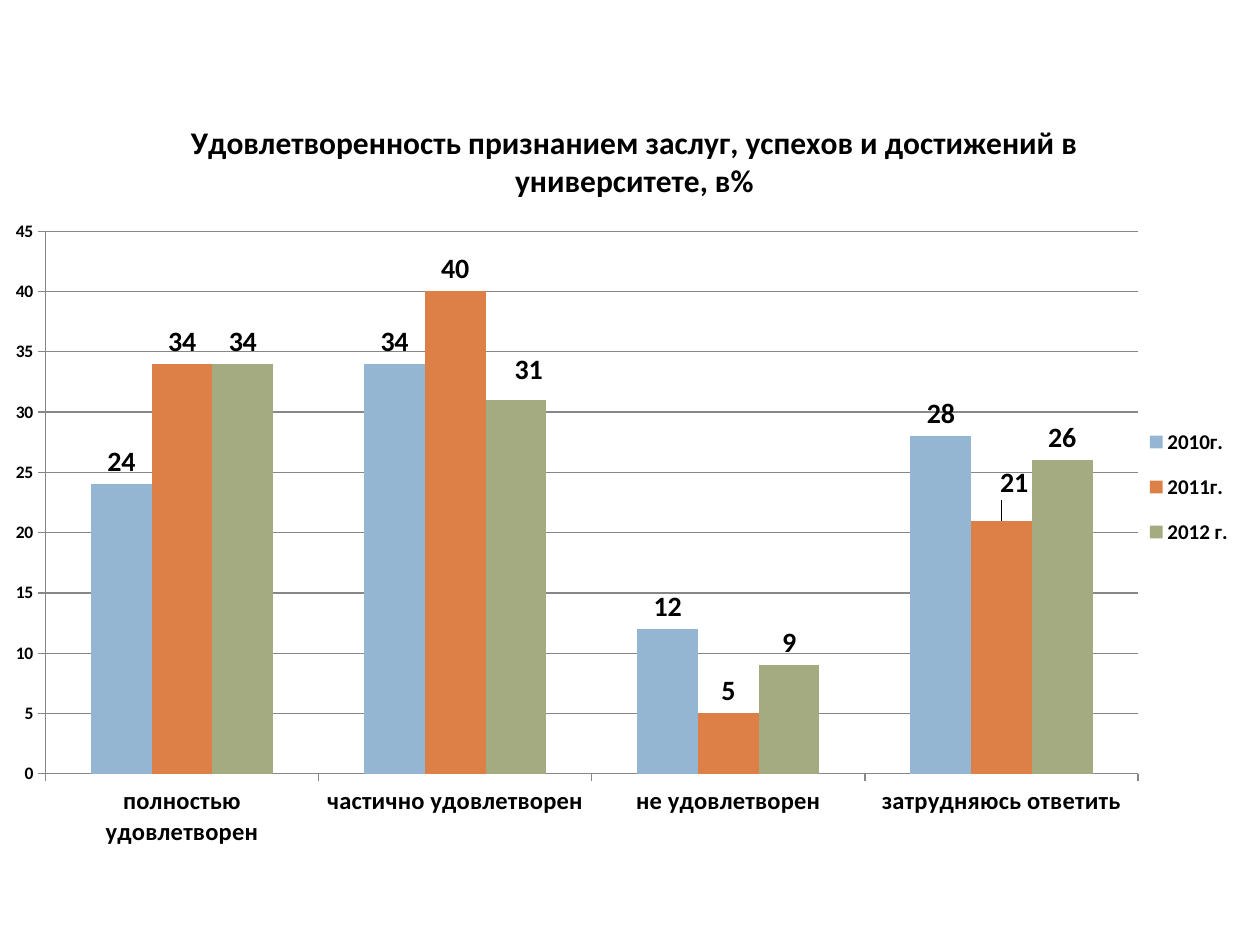
import dataclasses

import lxml.etree
import pptx
import pptx.chart.data
import pptx.dml.color
import pptx.enum.chart
import pptx.oxml.ns
import pptx.util

Pt = pptx.util.Pt


@dataclasses.dataclass(frozen=True)
class Theme:
    font: str = "Calibri"
    text: str = "000000"
    line: str = "878787"
    title_size: float = 18
    label_size: float = 16
    category_size: float = 14
    legend_size: float = 12
    value_size: float = 10


@dataclasses.dataclass(frozen=True)
class Series:
    name: str
    values: tuple[int, ...]
    color: str


@dataclasses.dataclass(frozen=True)
class LabelShift:
    series: int
    point: int
    x: float
    y: float


THEME = Theme()
CATEGORIES = ("полностью удовлетворен", "частично удовлетворен",
              "не удовлетворен", "затрудняюсь ответить")
SERIES = (
    Series("2010г.", (24, 34, 12, 28), "94B6D2"),
    Series("2011г.", (34, 40, 5, 21), "DD8047"),
    Series("2012 г.", (34, 31, 9, 26), "A5AB81"),
)
SHIFTS = (LabelShift(1, 3, 0.01, -0.02), LabelShift(2, 1, 0.01, -0.01))
TITLE = ("Удовлетворенность признанием заслуг, успехов и достижений "
         "в университете, в%")


def rgb(value: str) -> pptx.dml.color.RGBColor:
    return pptx.dml.color.RGBColor.from_string(value)


def style_font(font, size: float) -> None:
    font.name = THEME.font
    font.size = Pt(size)
    font.bold = True
    font.color.rgb = rgb(THEME.text)


def style_line(line) -> None:
    line.color.rgb = rgb(THEME.line)
    line.width = Pt(0.75)


def style_labels(labels) -> None:
    style_font(labels.font, THEME.label_size)
    labels.position = pptx.enum.chart.XL_LABEL_POSITION.OUTSIDE_END


def set_layout(parent, index: int, **settings) -> None:
    """Give a chart part a manual layout, in fractions of the chart."""
    qn = pptx.oxml.ns.qn
    for old in parent.findall(qn("c:layout")):
        parent.remove(old)
    layout = lxml.etree.Element(qn("c:layout"))
    manual = lxml.etree.SubElement(layout, qn("c:manualLayout"))
    for name, value in settings.items():
        lxml.etree.SubElement(manual, qn(f"c:{name}")).set("val", str(value))
    parent.insert(index, layout)


def add_chart(slide):
    data = pptx.chart.data.CategoryChartData()
    data.categories = CATEGORIES
    for series in SERIES:
        data.add_series(series.name, series.values)
    frame = slide.shapes.add_chart(
        pptx.enum.chart.XL_CHART_TYPE.COLUMN_CLUSTERED,
        Pt(-3), Pt(48), Pt(726), Pt(443), data)
    return frame.chart


def style_axes(chart) -> None:
    for axis, size in ((chart.category_axis, THEME.category_size),
                       (chart.value_axis, THEME.value_size)):
        style_font(axis.tick_labels.font, size)
        style_line(axis.format.line)
        axis.major_tick_mark = pptx.enum.chart.XL_TICK_MARK.OUTSIDE
        axis.minor_tick_mark = pptx.enum.chart.XL_TICK_MARK.NONE
    axis = chart.value_axis
    axis.minimum_scale, axis.maximum_scale, axis.major_unit = 0, 45, 5
    axis.has_major_gridlines = True
    style_line(axis.major_gridlines.format.line)


def style_columns(chart) -> None:
    plot = chart.plots[0]
    plot.gap_width = 150
    plot.overlap = 0
    plot.vary_by_categories = False
    for column, series in zip(plot.series, SERIES):
        column.format.fill.solid()
        column.format.fill.fore_color.rgb = rgb(series.color)
        column.data_labels.show_value = True
        style_labels(column.data_labels)
    # Labels moved clear of neighbouring columns
    for shift in SHIFTS:
        label = plot.series[shift.series].points[shift.point].data_label
        style_labels(label)
        set_layout(label._dLbl, 1, x=shift.x, y=shift.y)


def add_title_and_legend(chart) -> None:
    chart.has_title = True
    title = chart.chart_title
    p = title.text_frame.paragraphs[0]
    r = p.add_run()
    r.text = TITLE
    style_font(r.font, THEME.title_size)
    title.include_in_layout = False
    set_layout(title._element, 1, xMode="edge", yMode="edge", x=0.15, y=0.04)

    chart.has_legend = True
    legend = chart.legend
    legend.position = pptx.enum.chart.XL_LEGEND_POSITION.RIGHT
    legend.include_in_layout = False
    style_font(legend.font, THEME.legend_size)
    set_layout(legend._element, 1, xMode="edge", yMode="edge",
               x=0.9, y=0.42, w=0.08, h=0.2)


def main() -> None:
    prs = pptx.Presentation()
    prs.slide_width, prs.slide_height = Pt(720), Pt(540)
    s = prs.slides.add_slide(prs.slide_layouts[6])

    # Satisfaction by answer and year
    chart = add_chart(s)
    chart.font.name = THEME.font
    chart.font.size = Pt(THEME.value_size)
    style_axes(chart)
    style_columns(chart)
    add_title_and_legend(chart)
    plot_area = chart._chartSpace.chart.plotArea
    set_layout(plot_area, 0, layoutTarget="inner", xMode="edge", yMode="edge",
               x=0.04, y=0.19, w=0.86, h=0.7)

    prs.save("out.pptx")


if __name__ == "__main__":
    main()
